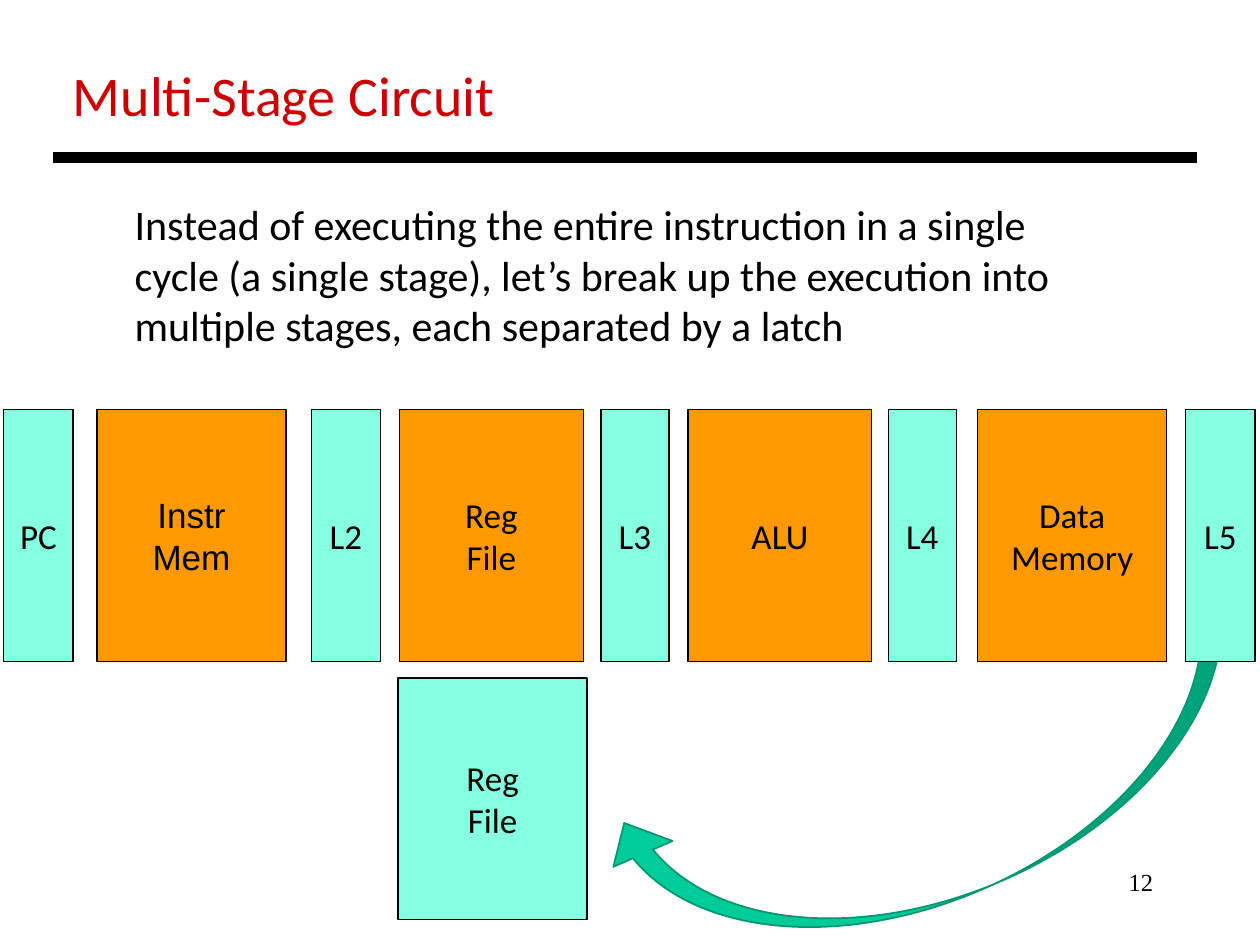
from lxml.etree import SubElement
from pptx import Presentation
from pptx.dml.color import RGBColor
from pptx.enum.shapes import MSO_CONNECTOR, MSO_SHAPE
from pptx.enum.text import MSO_ANCHOR, PP_ALIGN
from pptx.oxml.ns import qn
from pptx.util import Inches, Pt

# Content
TITLE = "Multi-Stage Circuit"
EXPLANATION = (
    "Instead of executing the entire instruction in a single\n"
    "cycle (a single stage), let’s break up the execution into\n"
    "multiple stages, each separated by a latch"
)
PAGE_NUMBER = "12"

LATCH, UNIT = "85FFE0", "FF9900"
BLACK, RED = "000000", "CC0000"
ARROW_FILL, ARROW_EDGE = "00CC99", "009771"
STAGE_TOP, STAGE_HEIGHT = 3.25, 2

# label, left, width, fill, font
STAGES = [
    ("PC", 0.03, 0.55, LATCH, "Calibri"),
    ("Instr\nMem", 0.77, 1.5, UNIT, "Arial"),
    ("L2", 2.47, 0.55, LATCH, "Calibri"),
    ("Reg\nFile", 3.17, 1.46, UNIT, "Calibri"),
    ("L3", 4.77, 0.54, LATCH, "Calibri"),
    ("ALU", 5.46, 1.46, UNIT, "Calibri"),
    ("L4", 7.05, 0.54, LATCH, "Calibri"),
    ("Data\nMemory", 7.76, 1.5, UNIT, "Calibri"),
    ("L5", 9.41, 0.55, LATCH, "Calibri"),
]


def rgb(color):
    return RGBColor.from_string(color)


def write(frame, text, size, font, color=BLACK, align=PP_ALIGN.LEFT):
    frame.text = text
    for paragraph in frame.paragraphs:
        paragraph.alignment = align
        paragraph.font.size = Pt(size)
        paragraph.font.name = font
        paragraph.font.color.rgb = rgb(color)


def add_text(slide, box, *style):
    frame = slide.shapes.add_textbox(*map(Inches, box)).text_frame
    frame.word_wrap = False
    write(frame, *style)
    return frame


def add_filled(slide, preset, box, fill, edge, weight):
    shape = slide.shapes.add_shape(preset, *map(Inches, box))
    shape.shadow.inherit = False
    shape.fill.solid()
    shape.fill.fore_color.rgb = rgb(fill)
    shape.line.color.rgb = rgb(edge)
    shape.line.width = Pt(weight)
    return shape


def add_block(slide, label, box, fill, font="Calibri"):
    block = add_filled(slide, MSO_SHAPE.RECTANGLE, box, fill, BLACK, 0.75)
    block.text_frame.word_wrap = False
    block.text_frame.vertical_anchor = MSO_ANCHOR.MIDDLE
    write(block.text_frame, label, 20, font, BLACK, PP_ALIGN.CENTER)


def main():
    deck = Presentation()
    deck.slide_width, deck.slide_height = Inches(10), Inches(7.5)
    slide = deck.slides.add_slide(deck.slide_layouts[6])

    # Page number, title with its rule, and explanation
    number = add_text(slide, (7.17, 6.83, 2.08, 0.5), PAGE_NUMBER, 14,
                      "Times New Roman", BLACK, PP_ALIGN.RIGHT)
    number.word_wrap = True
    add_text(slide, (0.48, 0.43, 3.59, 0.64), TITLE, 32, "Calibri", RED)
    rule = slide.shapes.add_connector(
        MSO_CONNECTOR.STRAIGHT, *map(Inches, (0.42, 1.25, 9.5, 1.25)))
    rule.line.color.rgb = rgb(BLACK)
    rule.line.width = Pt(6)
    SubElement(rule._element.spPr, qn("a:effectLst"))
    add_text(slide, (0.97, 1.53, 7.53, 1.3), EXPLANATION, 24, "Calibri")

    # Write-back arrow, tucked behind the last latch
    write_back = add_filled(slide, MSO_SHAPE.CURVED_DOWN_ARROW,
                            (4.82, 5.5, 5.33, 1.62), ARROW_FILL, ARROW_EDGE, 1)
    write_back.rotation = 156.4
    for index, value in enumerate((0.107, 0.316, 0.175)):
        write_back.adjustments[index] = value

    # Pipeline stages and the register file written back to
    for label, left, width, fill, font in STAGES:
        add_block(slide, label, (left, STAGE_TOP, width, STAGE_HEIGHT), fill, font)
    add_block(slide, "Reg\nFile", (3.16, 5.38, 1.5, 1.92), LATCH)

    deck.save("out.pptx")


if __name__ == "__main__":
    main()
